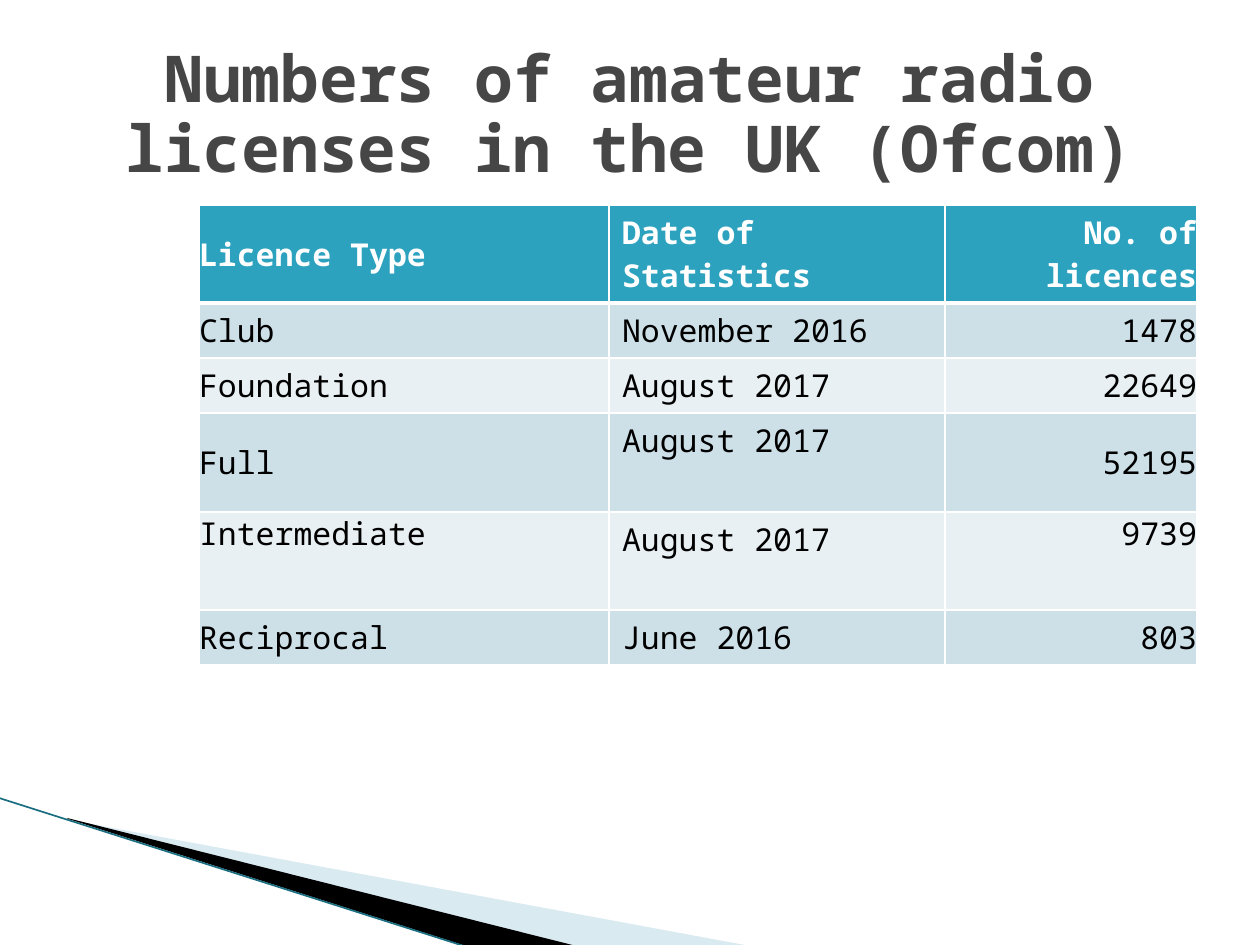
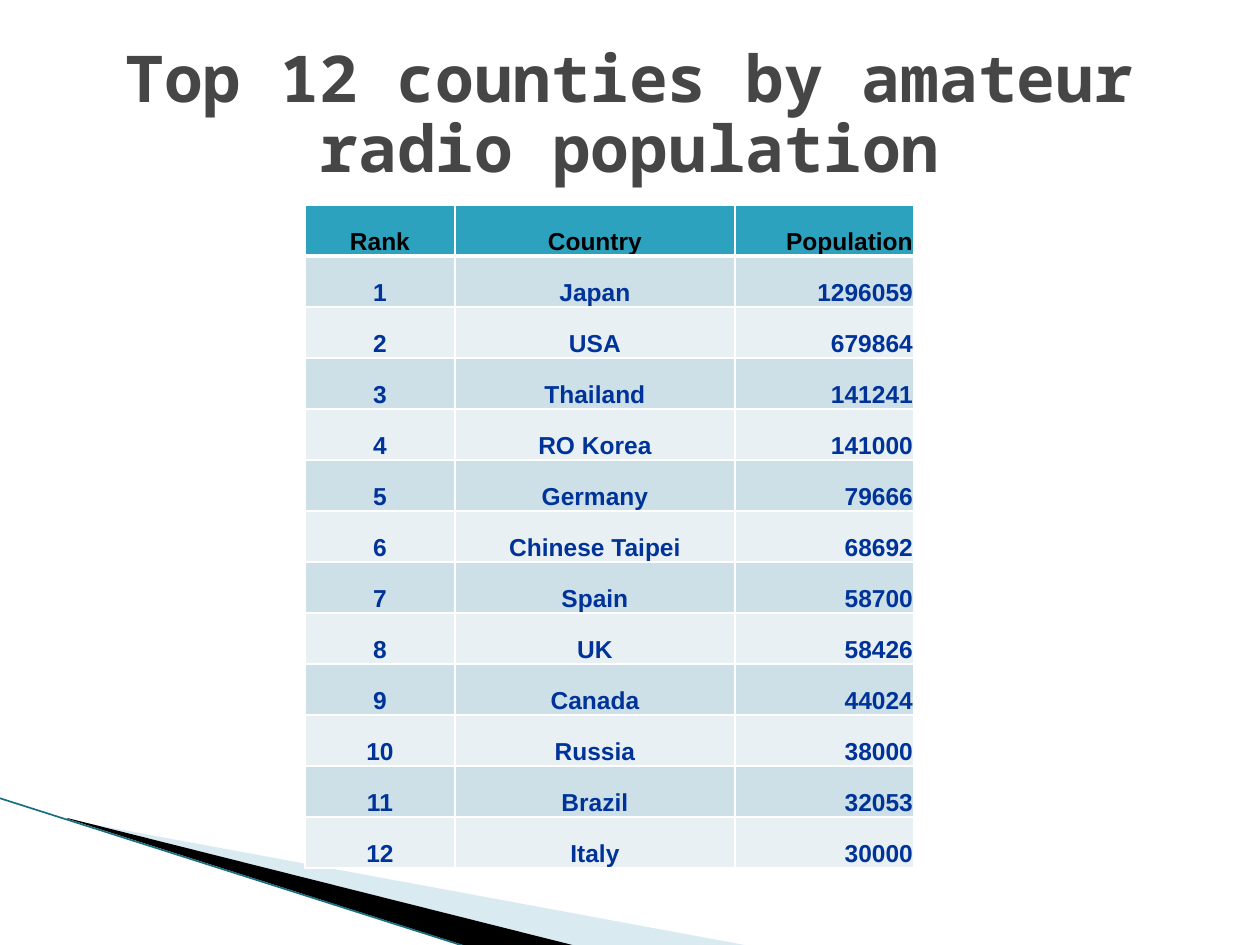
from lxml import etree
from pptx import Presentation
from pptx import util as u
from pptx.dml.color import RGBColor
from pptx.enum import shapes, text
from pptx.oxml import ns

PX = 914400 / 126  # EMU in one px
SLIDE = (1260, 945)
TITLE_BOX = (63, 38, 1134, 157)
BAND_BOX = (0, 798, 750, 147)

WHITE = RGBColor(0xFF, 0xFF, 0xFF)
BLACK = RGBColor(0, 0, 0)
TITLE_GREY = RGBColor(0x46, 0x46, 0x46)
HEADER_TEAL = RGBColor(0x2D, 0xA2, 0xBF)
ROW_DARK = RGBColor(0xCD, 0xE0, 0xE8)
ROW_LIGHT = RGBColor(0xE8, 0xF0, 0xF4)
NAVY = RGBColor(0x00, 0x33, 0x99)
PALE_BLUE = RGBColor(0xA0, 0xCB, 0xDC)
EDGE_TEAL = RGBColor(0x1A, 0x6E, 0x80)

MONO, SANS = "Noto Sans Mono", "Arial"
LEFT, CENTER, RIGHT = (text.PP_ALIGN.LEFT, text.PP_ALIGN.CENTER,
                       text.PP_ALIGN.RIGHT)
TOP, MIDDLE, BOTTOM = (text.MSO_ANCHOR.TOP, text.MSO_ANCHOR.MIDDLE,
                       text.MSO_ANCHOR.BOTTOM)

LICENCES = [
    ("Licence Type", "Date of Statistics", "No. of licences"),
    ("Club", "November 2016", "1478"),
    ("Foundation", "August 2017", "22649"),
    ("Full", "August 2017", "52195"),
    ("Intermediate", "August 2017", "9739"),
    ("Reciprocal", "June 2016", "803"),
]
COUNTRIES = [
    ("Japan", "1296059"), ("USA", "679864"), ("Thailand", "141241"),
    ("RO Korea", "141000"), ("Germany", "79666"),
    ("Chinese Taipei", "68692"), ("Spain", "58700"), ("UK", "58426"),
    ("Canada", "44024"), ("Russia", "38000"), ("Brazil", "32053"),
    ("Italy", "30000"),
]


def px(n):
    return u.Emu(round(n * PX))


def set_font(p, name, size, color, bold):
    f = p.font
    f.name, f.size, f.bold = name, u.Pt(size), bold
    f.color.rgb = color


def add_title(s, box, words):
    sp = s.shapes.add_textbox(*map(px, box))
    tf = sp.text_frame
    tf.word_wrap = True
    tf.vertical_anchor = MIDDLE
    p = tf.paragraphs[0]
    p.text = words
    p.alignment = CENTER
    p.line_spacing = 0.9
    set_font(p, MONO, 36.9, TITLE_GREY, True)


def add_wedge(s, points, color, alpha=None):
    fb = s.shapes.build_freeform(*points[0], scale=PX)
    fb.add_line_segments(points[1:])
    sp = fb.convert_to_shape()
    sp.shadow.inherit = False
    sp.fill.solid()
    sp.fill.fore_color.rgb = color
    sp.line.fill.background()
    if alpha:
        clr = sp.fill._xPr.find(".//" + ns.qn("a:srgbClr"))
        etree.SubElement(clr, ns.qn("a:alpha"), val=str(alpha * 1000))


def add_corner_band(s, box):
    x, y, w, h = box

    def at(*points):
        return [(x + dx, y + dy) for dx, dy in points]

    add_wedge(s, at((69, 22), (w, h + 1), (575, h + 1), (69, 21)),
              PALE_BLUE, alpha=40)
    add_wedge(s, at((67, 20), (576, h + 1), (469, h + 2), (68, 21)), BLACK)
    edge = s.shapes.add_connector(shapes.MSO_CONNECTOR.STRAIGHT,
                                  px(x - 1), px(y), px(x + 467), px(y + h + 2))
    edge.line.color.rgb = EDGE_TEAL
    edge.line.width = u.Pt(0.95)
    etree.SubElement(edge._element.spPr, ns.qn("a:effectLst"))


def set_borders(cell, top, bottom):
    tc_pr = cell._tc.get_or_add_tcPr()
    for side, width in (("L", 1), ("R", 1), ("T", top), ("B", bottom)):
        ln = etree.SubElement(tc_pr, ns.qn("a:ln" + side), w=str(u.Pt(width)))
        fill = etree.SubElement(ln, ns.qn("a:solidFill"))
        etree.SubElement(fill, ns.qn("a:srgbClr"), val=str(WHITE))


def add_grid(s, origin, cols, heights, rows, style):
    """Draw a banded table; style gives the font and the column layout."""
    gf = s.shapes.add_table(len(rows), len(cols), *map(px, origin),
                            px(sum(cols)), px(sum(heights)))
    tbl = gf.table
    tbl.horz_banding = False
    for col, width in zip(tbl.columns, cols):
        col.width = px(width)
    for r, (height, values) in enumerate(zip(heights, rows)):
        tbl.rows[r].height = px(height)
        band = ROW_DARK if r % 2 else ROW_LIGHT
        for c, value in enumerate(values):
            cell = tbl.cell(r, c)
            set_borders(cell, 3 if r == 1 else 1, 1 if r else 3)
            cell.fill.solid()
            cell.fill.fore_color.rgb = band if r else HEADER_TEAL
            (cell.margin_left, cell.margin_top, cell.margin_right,
             cell.margin_bottom) = map(px, style["insets"][c])
            cell.vertical_anchor = style["tops"].get((r, c), style["anchor"])
            p = cell.text_frame.paragraphs[0]
            p.text = value
            p.alignment = style["aligns"][c]
            set_font(p, style["font"], style["size"],
                     style["body"] if r else style["head"],
                     style["bold_body"] or r == 0)


def new_slide(prs, title):
    s = prs.slides.add_slide(prs.slide_layouts[6])
    add_corner_band(s, BAND_BOX)
    add_title(s, TITLE_BOX, title)
    return s


def licence_slide(prs):
    s = new_slide(prs, "Numbers of amateur radio licenses in the UK (Ofcom)")
    flush = (0, 0, 0, 0)
    style = dict(font=MONO, size=18, head=WHITE, body=BLACK, bold_body=False,
                 aligns=(LEFT, LEFT, RIGHT), anchor=MIDDLE,
                 insets=(flush, (13, 6, 13, 6), flush),
                 tops=dict.fromkeys([(0, 1), (3, 1), (4, 0), (4, 1), (4, 2)],
                                    TOP))
    add_grid(s, (199, 205), (410, 336, 252), (98, 55, 55, 99, 98, 55),
             LICENCES, style)


def country_slide(prs):
    s = new_slide(prs, "Top 12 counties by amateur radio population")
    style = dict(font=SANS, size=14, head=BLACK, body=NAVY, bold_body=True,
                 aligns=(CENTER, CENTER, RIGHT), anchor=BOTTOM,
                 insets=[(1, 1, 1, 0)] * 3, tops={})
    rows = [("Rank", "Country", "Population")]
    rows += [(str(rank), *row) for rank, row in enumerate(COUNTRIES, 1)]
    add_grid(s, (305, 205), (150, 280, 179), [51] * len(rows), rows, style)


def main():
    prs = Presentation()
    prs.slide_width, prs.slide_height = map(px, SLIDE)
    licence_slide(prs)
    country_slide(prs)
    prs.save("out.pptx")


if __name__ == "__main__":
    main()
